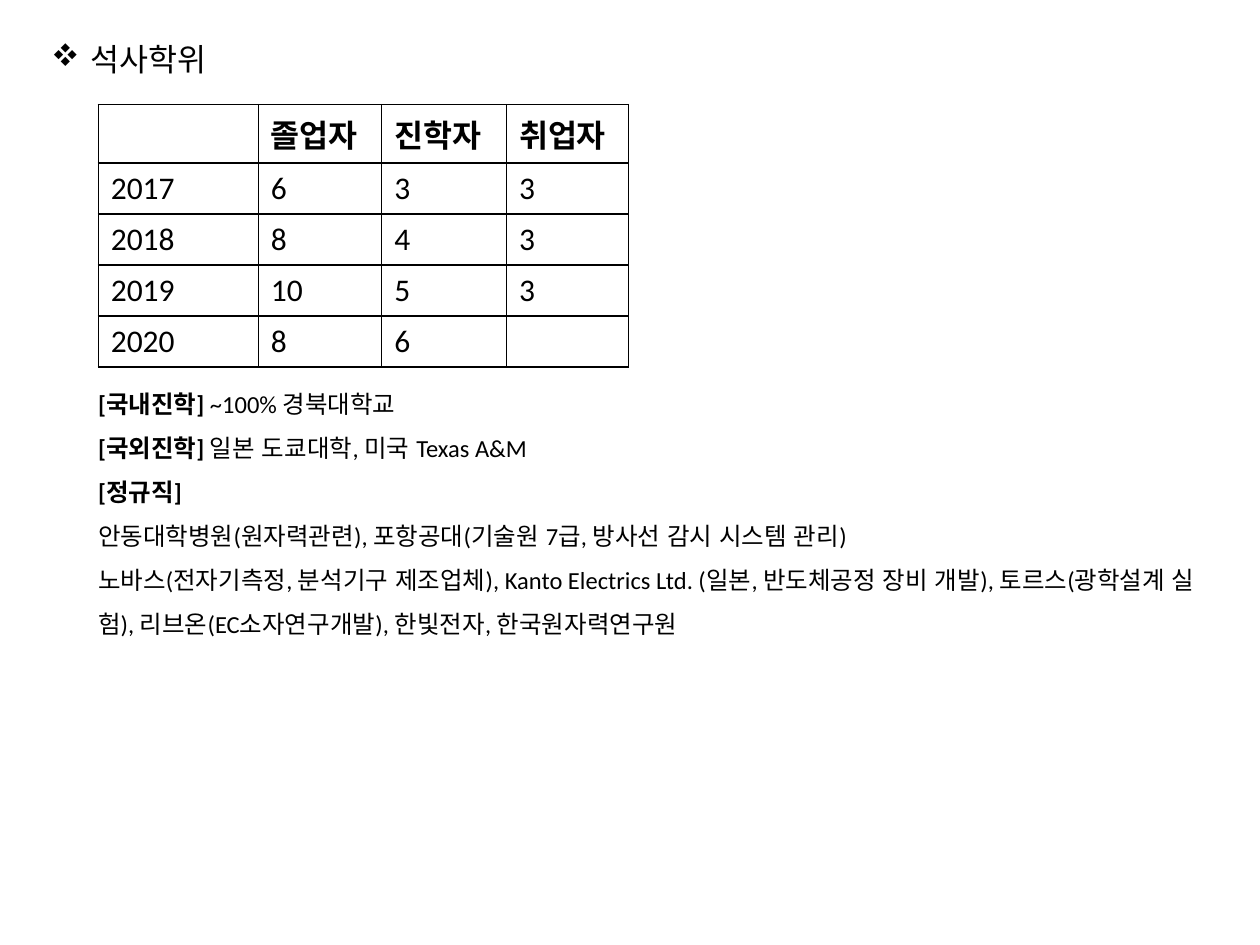
from lxml import etree
from pptx import Presentation
from pptx import util as u
from pptx.dml.color import RGBColor
from pptx.enum import lang, text
from pptx.oxml.ns import qn

FONT = "Calibri"
BLACK = "000000"
TITLE = "석사학위"
GRADUATES = [
    ["", "졸업자", "진학자", "취업자"],
    ["2017", "6", "3", "3"],
    ["2018", "8", "4", "3"],
    ["2019", "10", "5", "3"],
    ["2020", "8", "6", ""],
]
COLUMN_WIDTHS = [1.27, 0.98, 0.99, 0.97]
HEADER_HEIGHT, ROW_HEIGHT = 0.46, 0.4
# Each line: bold label, plain text
CAREERS = [
    ("[국내진학] ", "~100% 경북대학교"),
    ("[국외진학] ", "일본 도쿄대학, 미국 Texas A&M"),
    ("[정규직]", ""),
    ("", "안동대학병원(원자력관련), 포항공대(기술원 7급, 방사선 감시 시스템 관리)"),
    ("", "노바스(전자기측정, 분석기구 제조업체), Kanto Electrics Ltd. "
         "(일본, 반도체공정 장비 개발), 토르스(광학설계 실험), "
         "리브온(EC소자연구개발), 한빛전자, 한국원자력연구원"),
]


def color(value):
    return RGBColor.from_string(value)


def add_run(paragraph, words, size, bold=False):
    run = paragraph.add_run()
    run.text = words
    run.font.name = FONT
    run.font.size = u.Pt(size)
    run.font.bold = bold
    run.font.language_id = lang.MSO_LANGUAGE_ID.KOREAN
    run.font.color.rgb = color(BLACK)


def add_borders(cell, width=1):
    properties = cell._tc.get_or_add_tcPr()
    for position, side in enumerate(("a:lnL", "a:lnR", "a:lnT", "a:lnB")):
        line = etree.Element(qn(side), w=str(u.Pt(width)))
        fill = etree.SubElement(line, qn("a:solidFill"))
        etree.SubElement(fill, qn("a:srgbClr"), val=BLACK)
        properties.insert(position, line)


def add_diamond_bullet(paragraph, indent):
    """Hang a four-diamond bullet, which is the letter v in Wingdings."""
    properties = paragraph._p.get_or_add_pPr()
    properties.set("marL", str(u.Inches(indent)))
    properties.set("indent", str(-u.Inches(indent)))
    etree.SubElement(properties, qn("a:buFont"), typeface="Wingdings", charset="2")
    etree.SubElement(properties, qn("a:buChar"), char="v")


def add_text_frame(slide, left, top, width, height, wrap):
    box = slide.shapes.add_textbox(*map(u.Inches, (left, top, width, height)))
    box.text_frame.word_wrap = wrap
    box.text_frame.auto_size = text.MSO_AUTO_SIZE.SHAPE_TO_FIT_TEXT
    return box.text_frame


def add_graduate_table(slide, left, top):
    heights = [HEADER_HEIGHT] + [ROW_HEIGHT] * (len(GRADUATES) - 1)
    table = slide.shapes.add_table(
        len(heights), len(COLUMN_WIDTHS), u.Inches(left), u.Inches(top),
        u.Inches(sum(COLUMN_WIDTHS)), u.Inches(sum(heights))).table
    table.horz_banding = False
    for column, width in zip(table.columns, COLUMN_WIDTHS):
        column.width = u.Inches(width)
    for index, (row, height, values) in enumerate(zip(table.rows, heights, GRADUATES)):
        row.height = u.Inches(height)
        for cell, value in zip(row.cells, values):
            cell.fill.background()
            cell.vertical_anchor = text.MSO_ANCHOR.MIDDLE
            add_borders(cell)
            if value:
                add_run(cell.text_frame.paragraphs[0], value, 18, bold=index == 0)


def main():
    presentation = Presentation()
    presentation.slide_width, presentation.slide_height = u.Inches(10), u.Inches(7.5)
    slide = presentation.slides.add_slide(presentation.slide_layouts[6])

    add_graduate_table(slide, 0.78, 0.83)

    heading = add_text_frame(slide, 0.31, 0.27, 1.53, 0.4, wrap=False).paragraphs[0]
    add_diamond_bullet(heading, 0.31)
    add_run(heading, TITLE, 18)

    frame = add_text_frame(slide, 0.68, 2.92, 9.17, 2.19, wrap=True)
    for index, (label, details) in enumerate(CAREERS):
        paragraph = frame.add_paragraph() if index else frame.paragraphs[0]
        paragraph.line_spacing = 1.5
        if label:
            add_run(paragraph, label, 14, bold=True)
        if details:
            add_run(paragraph, details, 14)

    presentation.save("out.pptx")


if __name__ == "__main__":
    main()
